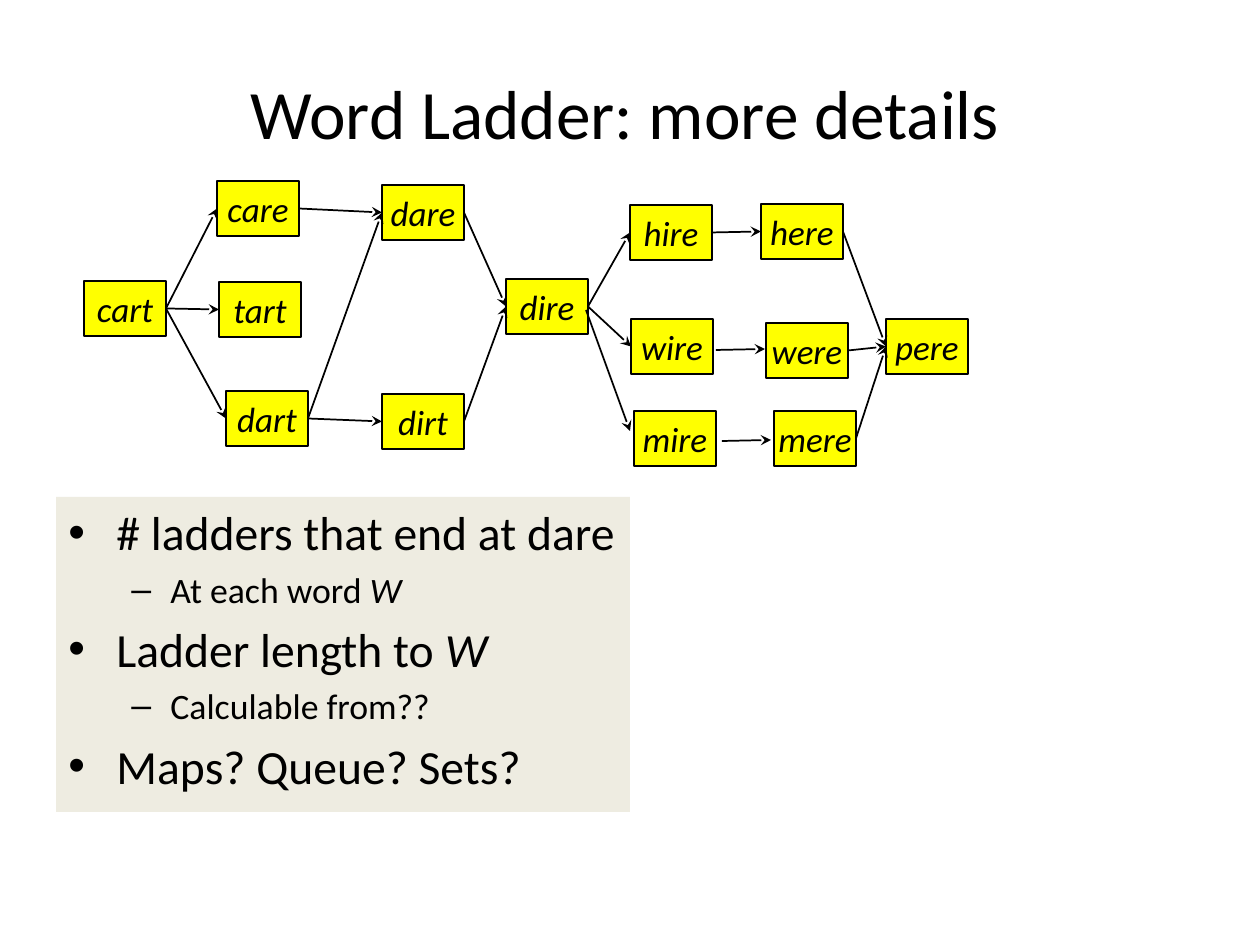
from lxml import etree
from pptx import Presentation
from pptx.dml.color import RGBColor
from pptx.enum.shapes import MSO_CONNECTOR, MSO_SHAPE
from pptx.enum.text import MSO_ANCHOR, PP_ALIGN
from pptx.oxml.ns import qn
from pptx.util import Pt

RECT = MSO_SHAPE.RECTANGLE
LINE = MSO_CONNECTOR.STRAIGHT
MIDDLE = MSO_ANCHOR.MIDDLE
CENTER, LEFT = PP_ALIGN.CENTER, PP_ALIGN.LEFT
PX = 914400 / 126
BOX_W, BOX_H = 82, 55
LEFT_SIDE, RIGHT_SIDE = 1, 3


def px(*nums):
    """Turn pixel lengths into a list of EMU."""
    return [round(n * PX) for n in nums]


def style(run, size, italic=False):
    run.font.name = "Calibri"
    run.font.size = Pt(size)
    run.font.italic = italic
    run.font.color.rgb = RGBColor.from_string("000000")


deck = Presentation()
deck.slide_width, deck.slide_height = px(1260, 945)
slide = deck.slides.add_slide(deck.slide_layouts[5])
shapes = slide.shapes

# Title
title = shapes.title
title.left, title.top, title.width, title.height = px(105, 63, 1040, 98)
title.text_frame.text = "Word Ladder: more details"
title.text_frame.vertical_anchor = MIDDLE
head = title.text_frame.paragraphs[0]
head.alignment = CENTER
style(head.runs[0], 39.6)

# Questions: level, plain text, italic ending
notes = [
    (0, "# ladders that end at dare", ""),
    (1, "At each word ", "W"),
    (0, "Ladder length to ", "W"),
    (1, "Calculable from??", ""),
    (0, "Maps? Queue? Sets?", ""),
]
# Text size, left margin, hanging indent and bullet of each level
levels = [(27.2, 48, 48, "•"), (20.4, 102, 39, "–")]

panel = shapes.add_shape(RECT, *px(56, 497, 574, 315))
panel.shadow.inherit = False
panel.fill.solid()
panel.fill.fore_color.rgb = RGBColor.from_string("EEECE1")
panel.line.fill.background()
frame = panel.text_frame
frame.word_wrap = True
frame.vertical_anchor = MSO_ANCHOR.TOP
for i, (level, text, ending) in enumerate(notes):
    size, margin, hang, mark = levels[level]
    para = frame.paragraphs[0] if i == 0 else frame.add_paragraph()
    para.text = text
    para.level = level
    para.alignment = LEFT
    para.space_before = Pt(round(size * 0.2, 1))
    style(para.runs[0], size)
    if ending:
        run = para.add_run()
        run.text = ending
        style(run, size, True)
    props = para._p.get_or_add_pPr()
    props.set("marL", str(px(margin)[0]))
    props.set("indent", str(px(-hang)[0]))
    etree.SubElement(props, qn("a:buFont"), typeface="Arial")
    etree.SubElement(props, qn("a:buChar"), char=mark)

# Words of the ladder
spots = {
    "cart": (84, 281), "care": (217, 181), "tart": (219, 282),
    "dart": (226, 391), "dare": (382, 185), "dirt": (382, 394),
    "dire": (506, 279), "hire": (630, 205), "wire": (631, 319),
    "mire": (634, 411), "here": (761, 204), "were": (766, 323),
    "mere": (774, 411), "pere": (886, 319),
}
boxes = {}
for word, (x, y) in spots.items():
    box = shapes.add_shape(RECT, *px(x, y, BOX_W, BOX_H))
    box.shadow.inherit = False
    box.fill.solid()
    box.fill.fore_color.rgb = RGBColor.from_string("FFFF00")
    box.line.color.rgb = RGBColor.from_string("000000")
    box.line.width = Pt(1)
    frame = box.text_frame
    frame.text = word
    frame.word_wrap = False
    frame.vertical_anchor = MIDDLE
    frame.paragraphs[0].alignment = CENTER
    style(frame.paragraphs[0].runs[0], 20, True)
    boxes[word] = box

# Steps from side to side, then those that stop short of a side's middle
steps = {
    "cart": ["tart", "care", "dart"],
    "care": ["dare"],
    "dart": ["dirt", "dare"],
    "dare": ["dire"],
    "dirt": ["dire"],
    "dire": ["hire", "wire"],
    "hire": ["here"],
    "here": ["pere"],
    "were": ["pere"],
    "mere": ["pere"],
}
arrows = []
for start, ends in steps.items():
    for end in ends:
        arrow = shapes.add_connector(LINE, 0, 0, 0, 0)
        arrow.begin_connect(boxes[start], RIGHT_SIDE)
        arrow.end_connect(boxes[end], LEFT_SIDE)
        arrows.append(arrow)
loose = [(586, 310, 630, 431), (716, 350, 765, 349), (722, 441, 771, 440)]
for ends in loose:
    arrows.append(shapes.add_connector(LINE, *px(*ends)))

for arrow in arrows:
    arrow.line.color.rgb = RGBColor.from_string("000000")
    arrow.line.width = Pt(1)
    etree.SubElement(arrow.line._get_or_add_ln(), qn("a:tailEnd"), type="stealth")
    etree.SubElement(arrow._element.spPr, qn("a:effectLst"))

deck.save("out.pptx")
